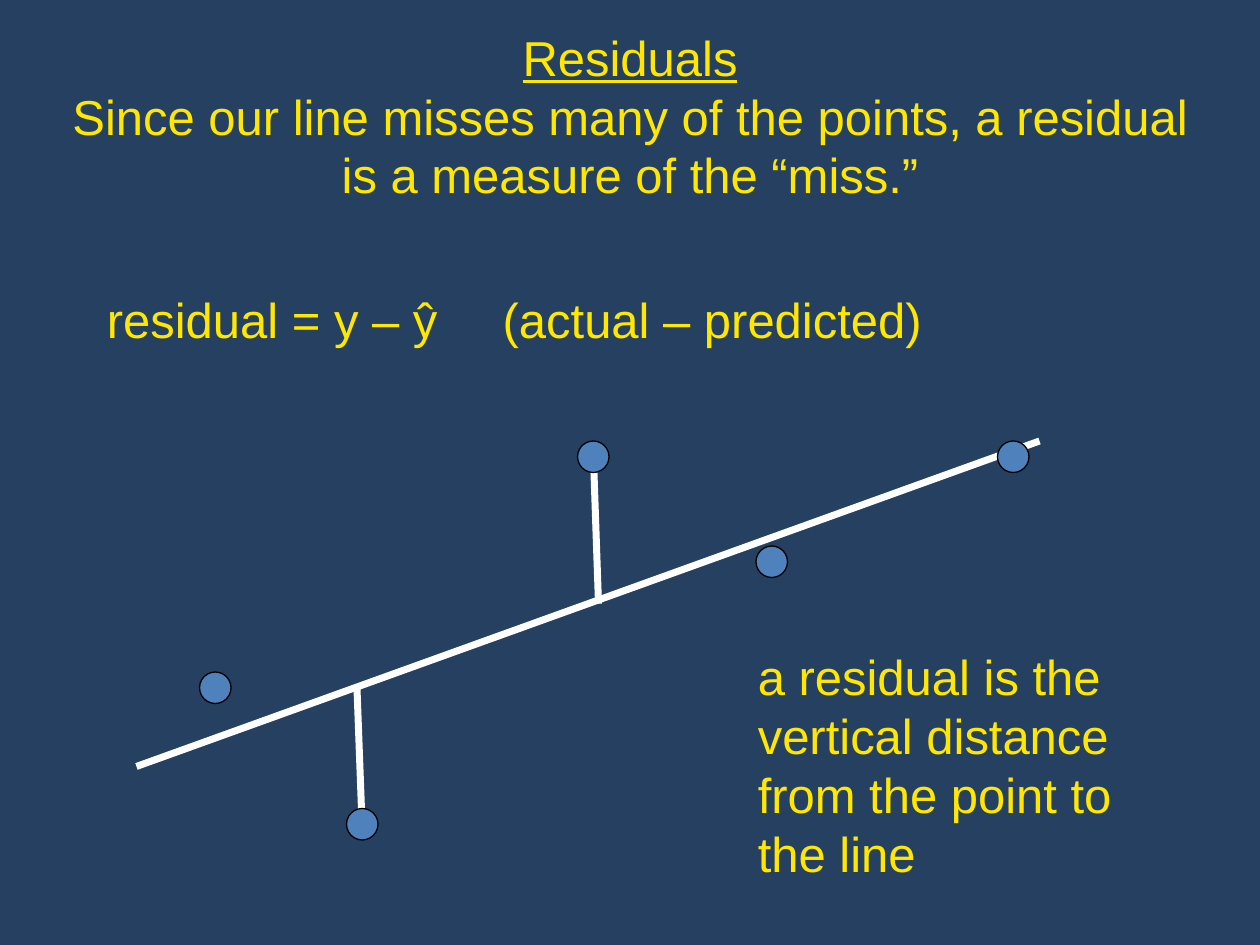
from dataclasses import dataclass

from lxml import etree
from pptx import Presentation
from pptx.dml.color import RGBColor
from pptx.enum.shapes import MSO_CONNECTOR, MSO_SHAPE
from pptx.enum.text import PP_ALIGN
from pptx.oxml.ns import qn
from pptx.util import Inches, Pt

STRAIGHT = MSO_CONNECTOR.STRAIGHT
OVAL = MSO_SHAPE.OVAL
LEFT, CENTER = PP_ALIGN.LEFT, PP_ALIGN.CENTER

# The slide is a grid of 120 columns by 90 rows
COLUMNS, ROWS = 120, 90
CELL = Inches(1) / 12
DOT_SIZE = 3


@dataclass(frozen=True)
class Theme:
    background: RGBColor = RGBColor.from_string("254061")
    text: RGBColor = RGBColor.from_string("FFE701")
    line: RGBColor = RGBColor.from_string("FFFFFF")
    dot: RGBColor = RGBColor.from_string("4F81BD")
    outline: RGBColor = RGBColor.from_string("000000")
    font: str = "Arial"
    text_size: Pt = Pt(28)
    line_width: Pt = Pt(4)
    outline_width: Pt = Pt(0.75)


THEME = Theme()

# Top left corners of the data points, as column and row
DATA_POINTS = [(19, 64), (33, 77), (55, 42), (72, 52), (95, 42)]
REGRESSION_LINE = ((13, 73), (99, 42))
RESIDUAL_LINES = [((56.5, 43), (57, 57.5)), ((34.5, 79), (34, 65.5))]


def grid(*cells):
    return [round(cell * CELL) for cell in cells]


def add_text(slide, box, *lines, align=LEFT, underline_first=False, tab=None):
    frame = slide.shapes.add_textbox(*grid(*box)).text_frame
    frame.word_wrap = True
    for index, line in enumerate(lines):
        paragraph = frame.add_paragraph() if index else frame.paragraphs[0]
        paragraph.alignment = align
        if tab is not None:
            tab_list = etree.SubElement(paragraph._p.get_or_add_pPr(), qn("a:tabLst"))
            etree.SubElement(tab_list, qn("a:tab"), pos=str(grid(tab)[0]), algn="l")
        run = paragraph.add_run()
        run.text = line
        run.font.name = THEME.font
        run.font.size = THEME.text_size
        run.font.color.rgb = THEME.text
        run.font.underline = underline_first and index == 0


def add_line(slide, start, end):
    connector = slide.shapes.add_connector(STRAIGHT, *grid(*start, *end))
    connector.line.color.rgb = THEME.line
    connector.line.width = THEME.line_width
    etree.SubElement(connector._element.spPr, qn("a:effectLst"))


def add_dot(slide, column, row):
    dot = slide.shapes.add_shape(OVAL, *grid(column, row, DOT_SIZE, DOT_SIZE))
    dot.shadow.inherit = False
    dot.fill.solid()
    dot.fill.fore_color.rgb = THEME.dot
    dot.line.color.rgb = THEME.outline
    dot.line.width = THEME.outline_width


def main():
    presentation = Presentation()
    presentation.slide_width, presentation.slide_height = grid(COLUMNS, ROWS)
    slide = presentation.slides.add_slide(presentation.slide_layouts[6])
    slide.background.fill.solid()
    slide.background.fill.fore_color.rgb = THEME.background

    # Heading and formula
    add_text(slide, (5, 2, 110, 18.1), "Residuals",
             "Since our line misses many of the points, a residual "
             "is a measure of the “miss.”",
             align=CENTER, underline_first=True)
    add_text(slide, (9, 27, 102, 6.8),
             "residual = y – ŷ\t(actual – predicted)", tab=37.7)

    # Regression line, residuals and data points
    for start, end in [REGRESSION_LINE, *RESIDUAL_LINES]:
        add_line(slide, start, end)
    for column, row in DATA_POINTS:
        add_dot(slide, column, row)

    # Explanation
    add_text(slide, (71, 61, 42, 23.9),
             "a residual is the vertical distance from the point to the line")

    presentation.save("out.pptx")


if __name__ == "__main__":
    main()
